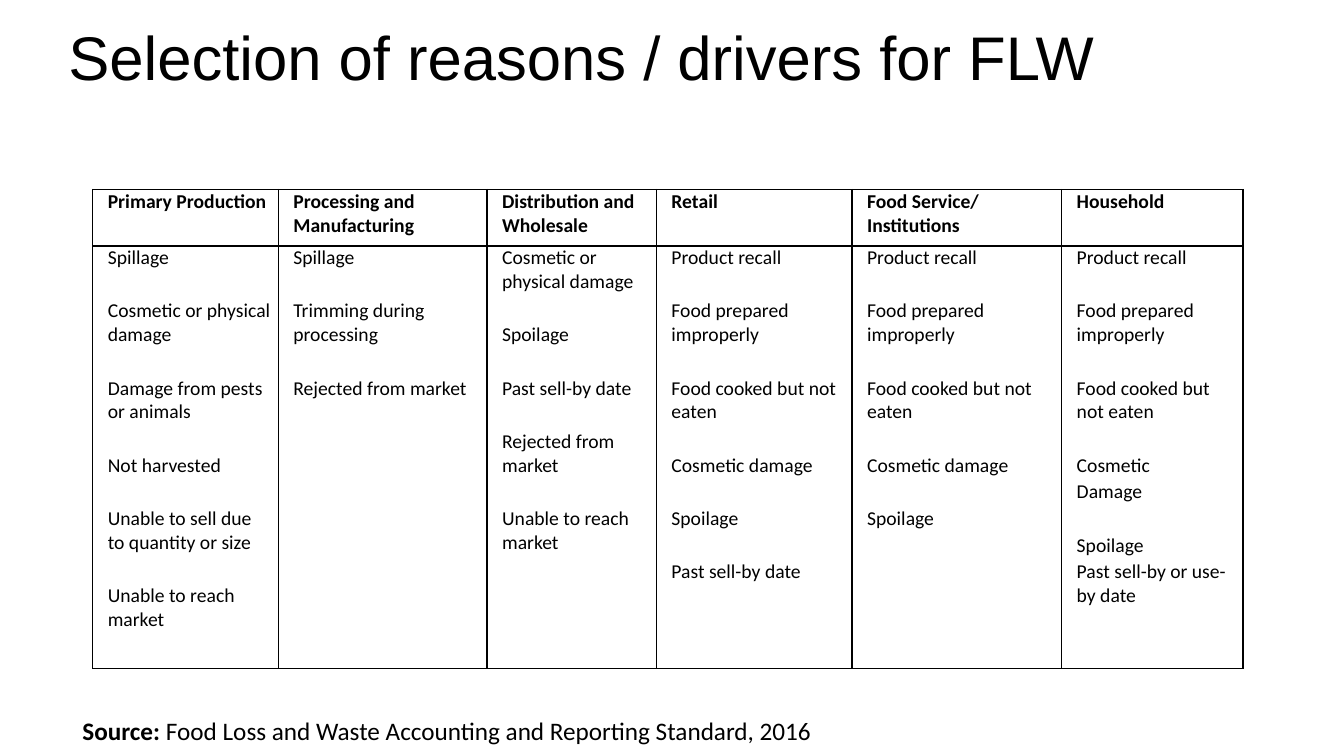
from pptx import Presentation, util as u
from pptx.dml.color import RGBColor
from pptx.enum import text
from pptx.oxml import parse_xml
from pptx.oxml.ns import nsdecls

COLORS = {"ink": "000000", "paper": "FFFFFF"}

# Stage of the food chain, column width in % of the slide, reasons.
# A line break inside a reason starts a closely set paragraph.
STAGES = [
    ("Primary Production", 13.81,
     ["Spillage", "Cosmetic or physical damage", "Damage from pests or animals",
      "Not harvested", "Unable to sell due to quantity or size",
      "Unable to reach market"]),
    ("Processing and Manufacturing", 15.53,
     ["Spillage", "Trimming during processing", "Rejected from market"]),
    ("Distribution and Wholesale", 12.6,
     ["Cosmetic or physical damage", "Spoilage", "Past sell-by date",
      "Rejected from market", "Unable to reach market"]),
    ("Retail", 14.56,
     ["Product recall", "Food prepared improperly", "Food cooked but not eaten",
      "Cosmetic damage", "Spoilage", "Past sell-by date"]),
    ("Food Service/ Institutions", 15.6,
     ["Product recall", "Food prepared improperly", "Food cooked but not eaten",
      "Cosmetic damage", "Spoilage"]),
    ("Household", 13.5,
     ["Product recall", "Food prepared improperly", "Food cooked but not eaten",
      "Cosmetic\nDamage", "Spoilage\nPast sell-by or use-by date"]),
]
ROW_HEIGHTS = [7.47, 55.87]
REASON_GAP, TIGHT_GAP = 21, 2


def add_span(para, words, font="Calibri", size=14, bold=False, color="ink"):
    span = para.add_run()
    span.text = words
    span.font.name, span.font.size, span.font.bold = font, u.Pt(size), bold
    span.font.color.rgb = RGBColor.from_string(COLORS[color])


class Page:
    """One slide, measured in hundredths of its width and height."""

    def __init__(self, deck):
        self.deck = deck
        self.slide = deck.slides.add_slide(deck.slide_layouts[6])
        self.slide.background.fill.solid()
        self.slide.background.fill.fore_color.rgb = RGBColor.from_string(COLORS["paper"])

    def across(self, share):
        return round(self.deck.slide_width * share / 100)

    def down(self, share):
        return round(self.deck.slide_height * share / 100)

    def area(self, left, top, width, height):
        return self.across(left), self.down(top), self.across(width), self.down(height)

    def text_box(self, area, spans, inset_top=0.05):
        frame = self.slide.shapes.add_textbox(*self.area(*area)).text_frame
        frame.word_wrap = True
        frame.margin_top = u.Inches(inset_top)
        frame.vertical_anchor = text.MSO_ANCHOR.TOP
        for words, style in spans:
            add_span(frame.paragraphs[0], words, **style)

    def table(self, left, top, stages, heights):
        widths = [width for _, width, _ in stages]
        area = self.area(left, top, sum(widths), sum(heights))
        table = self.slide.shapes.add_table(len(heights), len(stages), *area).table
        table.first_row = table.horz_banding = False
        for row, height in zip(table.rows, heights):
            row.height = self.down(height)
        for index, (stage, width, reasons) in enumerate(stages):
            table.columns[index].width = self.across(width)
            self.cell(table.cell(0, index), [stage], bold=True)
            self.cell(table.cell(1, index), reasons)

    def cell(self, cell, entries, **style):
        cell.margin_left = cell.margin_right = u.Inches(0.07)
        cell.margin_top = cell.margin_bottom = 0
        self.borders(cell)
        cell.fill.background()
        lines = [(line, TIGHT_GAP if part else REASON_GAP)
                 for entry in entries for part, line in enumerate(entry.split("\n"))]
        frame = cell.text_frame
        for number, (line, gap) in enumerate(lines):
            para = frame.add_paragraph() if number else frame.paragraphs[0]
            para._p.get_or_add_pPr().set("marL", str(u.Inches(0.08)))
            para.space_before = u.Pt(gap if number else 0)
            add_span(para, line, **style)

    def borders(self, cell):
        properties = cell._tc.get_or_add_tcPr()
        for side in "LRTB":
            properties.append(parse_xml(
                f'<a:ln{side} {nsdecls("a")} w="{u.Pt(1)}"><a:solidFill>'
                f'<a:srgbClr val="{COLORS["ink"]}"/></a:solidFill></a:ln{side}>'))


def main():
    deck = Presentation()
    deck.slide_width, deck.slide_height = u.Inches(13.33), u.Inches(7.5)
    page = Page(deck)

    # Title
    page.text_box((4.35, 0.93, 85.22, 19.33),
                  [("Selection of reasons / drivers for FLW", {"font": "Arial", "size": 44})],
                  inset_top=0.12)

    # Reasons by stage
    page.table(6.9, 25.07, STAGES, ROW_HEIGHTS)

    # Source line
    page.text_box((5.4, 94, 71.12, 5.33),
                  [("Source:", {"size": 18, "bold": True}),
                   (" Food Loss and Waste Accounting and Reporting Standard, 2016", {"size": 18})])

    deck.save("out.pptx")


if __name__ == "__main__":
    main()
